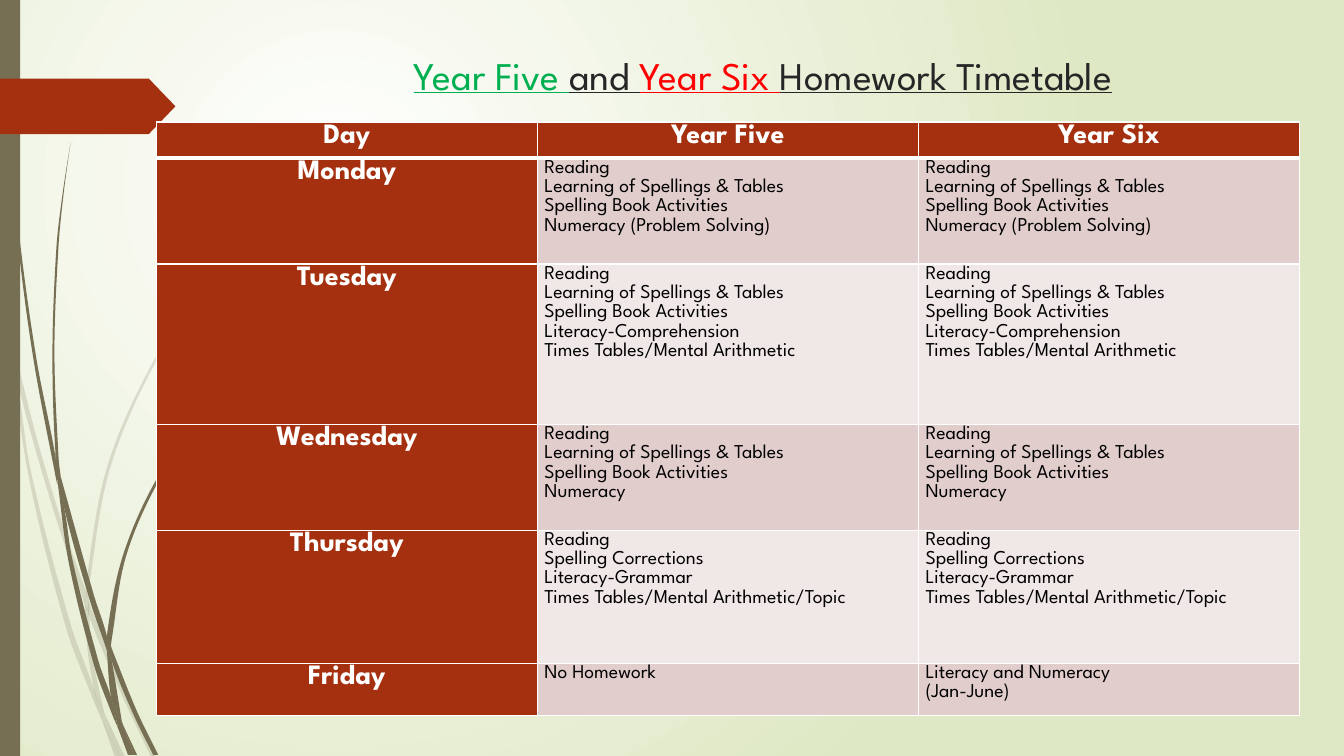
from dataclasses import dataclass
from math import dist

from lxml import etree
from pptx import Presentation
from pptx.dml.color import RGBColor
from pptx.enum import shapes, text
from pptx.oxml import ns
from pptx.util import Pt

PX = 9144
FONT = "League Spartan"
WHITE = RGBColor(0xFF, 0xFF, 0xFF)
BLACK = RGBColor(0x00, 0x00, 0x00)
INK = RGBColor(0x26, 0x26, 0x26)
GREEN = RGBColor(0x00, 0xB0, 0x50)
RED = RGBColor(0xFF, 0x00, 0x00)
RUST = RGBColor(0xA5, 0x30, 0x10)
OLIVE = RGBColor(0x76, 0x6F, 0x54)
LIME = RGBColor(0xDF, 0xE8, 0xC4)
ROSE = RGBColor(0xE1, 0xCD, 0xCC)
BLUSH = RGBColor(0xF0, 0xE8, 0xE7)

Dot = tuple[float, float]


@dataclass
class Blade:
    right: list[Dot]
    left: list[Dot]


@dataclass
class Day:
    name: str
    high: int
    five: list[str]
    six: list[str]


PALE = [
    Blade([(0, 282), (9, 322), (11, 350)], [(0, 299), (10, 344), (11, 350)]),
    Blade([(14, 345), (36, 433), (62, 520), (85, 586)],
          [(14, 345), (17, 376), (36, 449), (58, 522), (84, 599)]),
    Blade([(88, 596), (92, 607), (127, 692), (155, 751)],
          [(88, 596), (88, 610), (123, 694), (150, 751)]),
    Blade([(105, 711), (124, 751)], [(105, 711), (119, 751)]),
    Blade([(11, 350), (17, 376), (31, 469), (70, 619), (93, 683), (99, 707), (101, 714)],
          [(11, 350), (28, 470), (65, 621), (92, 693), (101, 714)]),
    Blade([(84, 599), (88, 608), (91, 646), (103, 706), (105, 711)],
          [(84, 599), (87, 646), (93, 683), (96, 692), (105, 711)]),
    Blade([(312, 154), (290, 175), (268, 198), (229, 245), (160, 349), (110, 462),
           (88, 584), (88, 596)],
          [(312, 153), (289, 175), (268, 197), (228, 244), (158, 348), (107, 461),
           (85, 584), (88, 596)]),
    Blade([(101, 714), (119, 751)], [(101, 714), (114, 751)]),
    Blade([(85, 586), (88, 596), (88, 610)], [(85, 586), (84, 599), (88, 608)]),
    Blade([(93, 683), (96, 692), (105, 711), (119, 751)],
          [(93, 683), (99, 707), (101, 714), (119, 751)]),
]
DARK = [
    Blade([(4, 0), (5, 48), (8, 109), (19, 232), (36, 355), (55, 453), (57, 481)],
          [(3, 0), (4, 48), (7, 110), (17, 233), (33, 355), (56, 477), (57, 481)]),
    Blade([(60, 472), (93, 590), (106, 631), (106, 645)],
          [(60, 472), (64, 505), (88, 592), (106, 645)]),
    Blade([(110, 641), (113, 649), (136, 706), (157, 749)],
          [(110, 641), (111, 656), (132, 708), (152, 749)]),
    Blade([(57, 477), (64, 505), (72, 556), (98, 657), (110, 691), (116, 717), (117, 722)],
          [(57, 477), (68, 557), (93, 659), (111, 708), (117, 722)]),
    Blade([(70, 141), (63, 193), (58, 245), (54, 349), (58, 453), (60, 472)],
          [(70, 141), (62, 193), (56, 245), (52, 349), (55, 449), (60, 472)]),
    Blade([(122, 719), (136, 749)], [(122, 719), (133, 749)]),
    Blade([(55, 449), (60, 472), (64, 505)], [(55, 449), (55, 453), (57, 477), (64, 505)]),
    Blade([(261, 344), (245, 359), (231, 374), (205, 406), (158, 476), (125, 552),
           (111, 633), (110, 641)],
          [(260, 344), (245, 358), (231, 373), (204, 405), (156, 474), (122, 551),
           (106, 631), (110, 641)]),
    Blade([(117, 722), (131, 749)], [(117, 722), (127, 749)]),
    Blade([(106, 645), (109, 651), (111, 656), (121, 716), (122, 719)],
          [(106, 645), (110, 691), (116, 706), (122, 719)]),
    Blade([(106, 631), (110, 641), (111, 656)], [(106, 631), (106, 645), (109, 651), (111, 656)]),
    Blade([(110, 691), (116, 706), (122, 719), (133, 749)],
          [(110, 691), (116, 717), (117, 722), (130, 749)]),
]

BASE = ["Reading", "Learning of Spellings & Tables", "Spelling Book Activities"]
MON = BASE + ["Numeracy (Problem Solving)"]
TUE = BASE + ["Literacy-Comprehension", "Times Tables/Mental Arithmetic"]
WED = BASE + ["Numeracy"]
THU = ["Reading", "Spelling Corrections", "Literacy-Grammar",
       "Times Tables/Mental Arithmetic/Topic"]
DAYS = [
    Day("Monday", 105, MON, MON),
    Day("Tuesday", 159, TUE, TUE),
    Day("Wednesday", 105, WED, WED),
    Day("Thursday", 132, THU, THU),
    Day("Friday", 52, ["No Homework"], ["Literacy and Numeracy", "(Jan-June)"]),
]
TITLE = [("Year Five ", GREEN), ("and ", INK), ("Year Six ", RED),
         ("Homework Timetable", INK)]


def paint(shape, tint: RGBColor, alpha: int = 100) -> None:
    shape.shadow.inherit = False
    shape.line.fill.background()
    shape.fill.solid()
    shape.fill.fore_color.rgb = tint
    if alpha < 100:
        for node in shape._element.spPr.iter(ns.qn("a:srgbClr")):
            etree.SubElement(node, ns.qn("a:alpha")).set("val", str(alpha * 1000))


def aim(at: Dot, fore: Dot, back: Dot, reach: float) -> Dot:
    part = reach / 3 / dist(fore, back)
    return at[0] + (fore[0] - back[0]) * part, at[1] + (fore[1] - back[1]) * part


def bend(dots: list[Dot]) -> list[Dot]:
    ends = [dots[0], *dots, dots[-1]]
    out = []
    for a, b, c, d in zip(ends, ends[1:], ends[2:], ends[3:]):
        span = dist(b, c)
        out += [aim(b, c, a, span), aim(c, b, d, span), c]
    return out


def grow(group, blade: Blade, alpha: int) -> None:
    back = blade.left[::-1]
    turn = [blade.right[-1], back[0], back[0]] if blade.right[-1] != back[0] else []
    dots = [blade.right[0], *bend(blade.right), *turn, *bend(back)]
    dots = [(round(x * PX), round(y * PX)) for x, y in dots]
    pen = group.shapes.build_freeform(*dots[0])
    pen.add_line_segments(dots[1:], close=True)
    shape = pen.convert_to_shape()
    lines = list(shape._element.iter(ns.qn("a:lnTo")))
    for trio in zip(*(lines[i::3] for i in range(3))):
        curve = etree.Element(ns.qn("a:cubicBezTo"))
        trio[0].addprevious(curve)
        for line in trio:
            curve.append(line[0])
            line.getparent().remove(line)
    paint(shape, OLIVE, alpha)


def block(slide, kind, box: tuple[int, ...], tint: RGBColor):
    shape = slide.shapes.add_shape(kind, *(n * PX for n in box))
    paint(shape, tint)
    return shape


def write(para, words: str, size: int, tint: RGBColor, bold: bool = False,
          under: bool = False) -> None:
    run = para.add_run()
    run.text = words
    font = run.font
    font.name, font.size, font.bold, font.underline = FONT, Pt(size), bold, under
    font.color.rgb = tint


def edge(cell, side: str, width: int) -> None:
    line = etree.SubElement(cell._tc.get_or_add_tcPr(), ns.qn("a:ln" + side))
    line.set("w", str(Pt(width)))
    fill = etree.SubElement(line, ns.qn("a:solidFill"))
    etree.SubElement(fill, ns.qn("a:srgbClr")).set("val", str(WHITE))


def fill(cell, lines: list[str], tint: RGBColor, head: bool, top: int, base: int) -> None:
    cell.margin_left = cell.margin_right = 7 * PX
    cell.margin_top = cell.margin_bottom = 0
    for side, width in (("L", 1), ("R", 1), ("T", top), ("B", base)):
        edge(cell, side, width)
    cell.fill.solid()
    cell.fill.fore_color.rgb = tint
    frame = cell.text_frame
    for i, line in enumerate(lines):
        para = frame.add_paragraph() if i else frame.paragraphs[0]
        para.line_spacing = 1.07
        para.alignment = text.PP_ALIGN.CENTER if head else text.PP_ALIGN.LEFT
        write(para, line, 20 if head else 14, WHITE if head else BLACK, head)


def plan(slide) -> None:
    highs = [36] + [day.high for day in DAYS]
    grid = slide.shapes.add_table(
        len(highs), 3, 155 * PX, 121 * PX, 1134 * PX, sum(highs) * PX).table
    for row, high in zip(grid.rows, highs):
        row.height = high * PX
    for col in grid.columns:
        col.width = 378 * PX
    for x, name in enumerate(("Day", "Year Five", "Year Six")):
        fill(grid.cell(0, x), [name], RUST, True, 1, 3)
    for y, day in enumerate(DAYS, 1):
        tint = ROSE if y % 2 else BLUSH
        for x, lines in enumerate(([day.name], day.five, day.six)):
            fill(grid.cell(y, x), lines, tint if x else RUST, x == 0, 3 if y == 1 else 1, 1)


def shade(slide) -> None:
    wash = slide.background.fill
    wash.gradient()
    for stop, tint in zip(wash.gradient_stops, (WHITE, LIME)):
        stop.color.rgb = tint
    lin = next(slide._element.iter(ns.qn("a:lin")))
    ring = etree.Element(ns.qn("a:path"))
    ring.set("path", "circle")
    rect = etree.SubElement(ring, ns.qn("a:fillToRect"))
    for side, part in zip("ltrb", (50, 50, 100, 100)):
        rect.set(side, str(part * 1000))
    lin.getparent().replace(lin, ring)


def head(slide) -> None:
    box = slide.shapes.add_textbox(284 * PX, 44 * PX, 945 * PX, 58 * PX)
    frame = box.text_frame
    frame.word_wrap = True
    frame.vertical_anchor = text.MSO_ANCHOR.BOTTOM
    para = frame.paragraphs[0]
    para.alignment = text.PP_ALIGN.CENTER
    for words, tint in TITLE:
        write(para, words, 28, tint, under=True)


def main() -> None:
    deck = Presentation()
    deck.slide_width, deck.slide_height = 1333 * PX, 750 * PX
    slide = deck.slides.add_slide(deck.slide_layouts[6])
    shade(slide)
    for blades, alpha in ((PALE, 20), (DARK, 100)):
        group = slide.shapes.add_group_shape()
        for blade in blades:
            grow(group, blade, alpha)
    block(slide, shapes.MSO_SHAPE.RECTANGLE, (0, 0, 20, 750), OLIVE)
    flag = block(slide, shapes.MSO_SHAPE.PENTAGON, (0, 78, 174, 55), RUST)
    flag.adjustments[0] = 0.48
    head(slide)
    plan(slide)
    deck.save("out.pptx")


if __name__ == "__main__":
    main()
